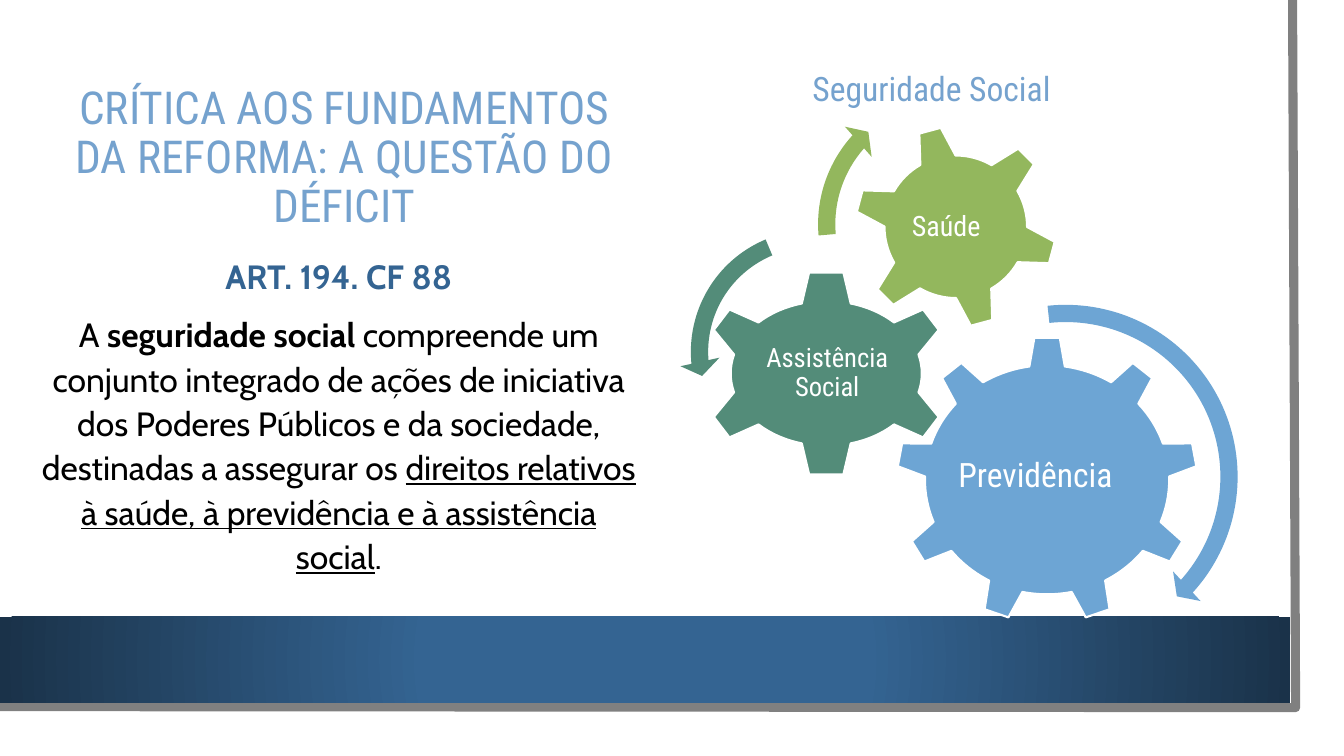
from lxml import etree
from pptx import Presentation
from pptx.dml.color import RGBColor
from pptx.enum.shapes import MSO_SHAPE as SHAPE
from pptx.enum.text import MSO_ANCHOR as ANCHOR, PP_ALIGN as ALIGN
from pptx.oxml import parse_xml
from pptx.util import Inches, Pt

WHITE = RGBColor(0xFF, 0xFF, 0xFF)
BLACK = RGBColor(0, 0, 0)
GRAY = RGBColor(0x80, 0x80, 0x80)
NAVY = RGBColor(0x34, 0x64, 0x92)
DARK_NAVY = RGBColor(0x1A, 0x32, 0x49)
TITLE_BLUE = RGBColor(0x75, 0xA2, 0xCE)
BLUE = RGBColor(0x6D, 0xA5, 0xD4)
TEAL = RGBColor(0x53, 0x8C, 0x79)
GREEN = RGBColor(0x93, 0xB7, 0x5D)
HEAD_FONT, BODY_FONT = "Roboto Condensed", "Cabin"

TITLE = "CRÍTICA AOS FUNDAMENTOS DA REFORMA: A QUESTÃO DO DÉFICIT"
ARTICLE = "ART. 194. CF 88"
LAW = [
    ("A ", False, False),
    ("seguridade social ", True, False),
    ("compreende um conjunto integrado de ações de iniciativa dos Poderes "
     "Públicos e da sociedade, destinadas a assegurar os ", False, False),
    ("direitos relativos à saúde, à previdência e à assistência social", False, True),
    (".", False, False),
]
DIAGRAM_TITLE = "Seguridade Social"
GEARS = [
    (SHAPE.GEAR_9, (8.89, 3.34, 2.99, 2.84), 0, BLUE,
     "Previdência", 24, (9.48, 4, 1.58, 1.46)),
    (SHAPE.GEAR_6, (6.94, 2.68, 2.51, 2.05), 0, TEAL,
     "Assistência Social", 19, (7.53, 3.2, 1.35, 1.01)),
    (SHAPE.GEAR_6, (8.47, 1.24, 2.02, 2.02), 345, GREEN,
     "Saúde", 20, (8.91, 1.69, 0.95, 1.14)),
]
ARROWS = [
    (SHAPE.CIRCULAR_ARROW, (8.75, 2.91, 3.64, 3.64), BLUE,
     (0.047, 2.99, 25.275, 158.37, 0.055)),
    (SHAPE.LEFT_CIRCULAR_ARROW, (6.74, 2.17, 2.64, 2.64), TEAL,
     (0.065, 4.3, 104.891, 148.378, 0.075)),
    (SHAPE.CIRCULAR_ARROW, (8, 0.8, 2.85, 2.85), GREEN,
     (0.06, 3.941, 133.138, 105.082, 0.07)),
]
GRADIENT = (
    '<a:gradFill xmlns:a="http://schemas.openxmlformats.org/drawingml/2006/main" '
    'rotWithShape="1"><a:gsLst>'
    f'<a:gs pos="34000"><a:srgbClr val="{NAVY}"/></a:gs>'
    f'<a:gs pos="100000"><a:srgbClr val="{DARK_NAVY}"/></a:gs></a:gsLst>'
    '<a:path path="circle"><a:fillToRect l="50000" t="50000" r="50000" b="50000"/>'
    '</a:path></a:gradFill>'
)


def box(numbers):
    return [Inches(n) for n in numbers]


def add_shape(s, kind, at, color, line=None):
    sp = s.shapes.add_shape(kind, *box(at))
    sp.shadow.inherit = False
    sp.fill.solid()
    sp.fill.fore_color.rgb = color
    if line is None:
        sp.line.fill.background()
    else:
        sp.line.color.rgb = line
        sp.line.width = Pt(1.5)
    return sp


def style(p, font, size, color, spacing=None):
    p.alignment = ALIGN.CENTER
    p.line_spacing = spacing
    p.font.name = font
    p.font.size = Pt(size)
    p.font.color.rgb = color


def add_text(s, at):
    tf = s.shapes.add_textbox(*box(at)).text_frame
    tf.word_wrap = True
    return tf


def add_background(s):
    add_shape(s, SHAPE.RECTANGLE, (0, 0, 13.1, 7.27), WHITE)
    edge = s.shapes.build_freeform(Inches(12.82), 0)
    edge.add_line_segments([box((12.85, 7.02)), box((-0.03, 7.01))], close=False)
    sp = edge.convert_to_shape()
    sp.shadow.inherit = False
    sp.fill.background()
    sp.line.color.rgb = GRAY
    sp.line.width = Pt(6.5)
    band = add_shape(s, SHAPE.RECTANGLE, (0, 6.12, 12.8, 0.85), NAVY)
    props = band._element.spPr
    solid = props.find("{*}solidFill")
    props.replace(solid, parse_xml(GRADIENT))


def add_title(s):
    title = s.shapes.title
    s.shapes._spTree.append(title._element)
    title.left, title.top, title.width, title.height = box((0.56, 0.64, 5.71, 2.21))
    tf = title.text_frame
    tf.text = TITLE
    tf.word_wrap = True
    tf.vertical_anchor = ANCHOR.BOTTOM
    tf.margin_bottom = Inches(0.54)
    style(tf.paragraphs[0], HEAD_FONT, 32.4, TITLE_BLUE, 0.9)


def add_gears(s):
    for kind, at, angle, color, label, size, label_at in GEARS:
        add_shape(s, kind, at, color, WHITE).rotation = angle
        tf = add_text(s, label_at)
        tf.vertical_anchor = ANCHOR.MIDDLE
        tf.margin_left = tf.margin_right = Inches(0.02)
        tf.margin_top = tf.margin_bottom = Inches(0.03)
        tf.text = label
        style(tf.paragraphs[0], HEAD_FONT, size, WHITE, 0.9)
    for kind, at, color, adjustments in ARROWS:
        sp = add_shape(s, kind, at, color)
        for i, value in enumerate(adjustments):
            sp.adjustments[i] = value


def add_law(s):
    tf = add_text(s, (0.29, 2.45, 6.14, 3.49))
    p = tf.paragraphs[0]
    p.text = ARTICLE
    style(p, BODY_FONT, 24, NAVY, 1.1)
    p.font.bold = True
    p = tf.add_paragraph()
    style(p, BODY_FONT, 24, BLACK, 1.1)
    p.space_before = Pt(10)
    for text, bold, underline in LAW:
        r = p.add_run()
        r.text = text
        r.font.bold = bold
        r.font.underline = underline


def main():
    prs = Presentation()
    prs.slide_width, prs.slide_height = box((13.33, 7.5))
    s = prs.slides.add_slide(prs.slide_layouts[5])
    add_background(s)
    add_title(s)
    add_gears(s)
    add_law(s)
    tf = add_text(s, (7.06, 0.62, 4.36, 0.5))
    tf.text = DIAGRAM_TITLE
    style(tf.paragraphs[0], HEAD_FONT, 24, TITLE_BLUE)
    prs.save("out.pptx")


if __name__ == "__main__":
    main()
